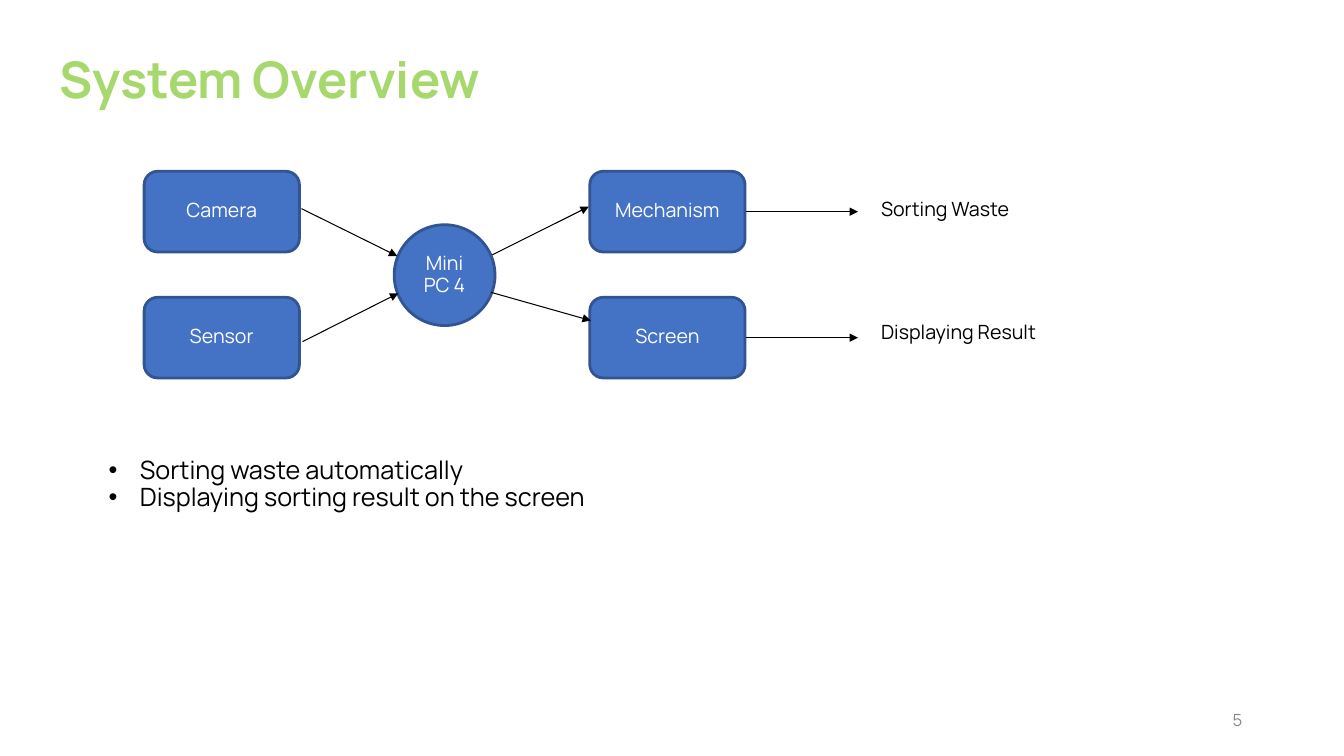
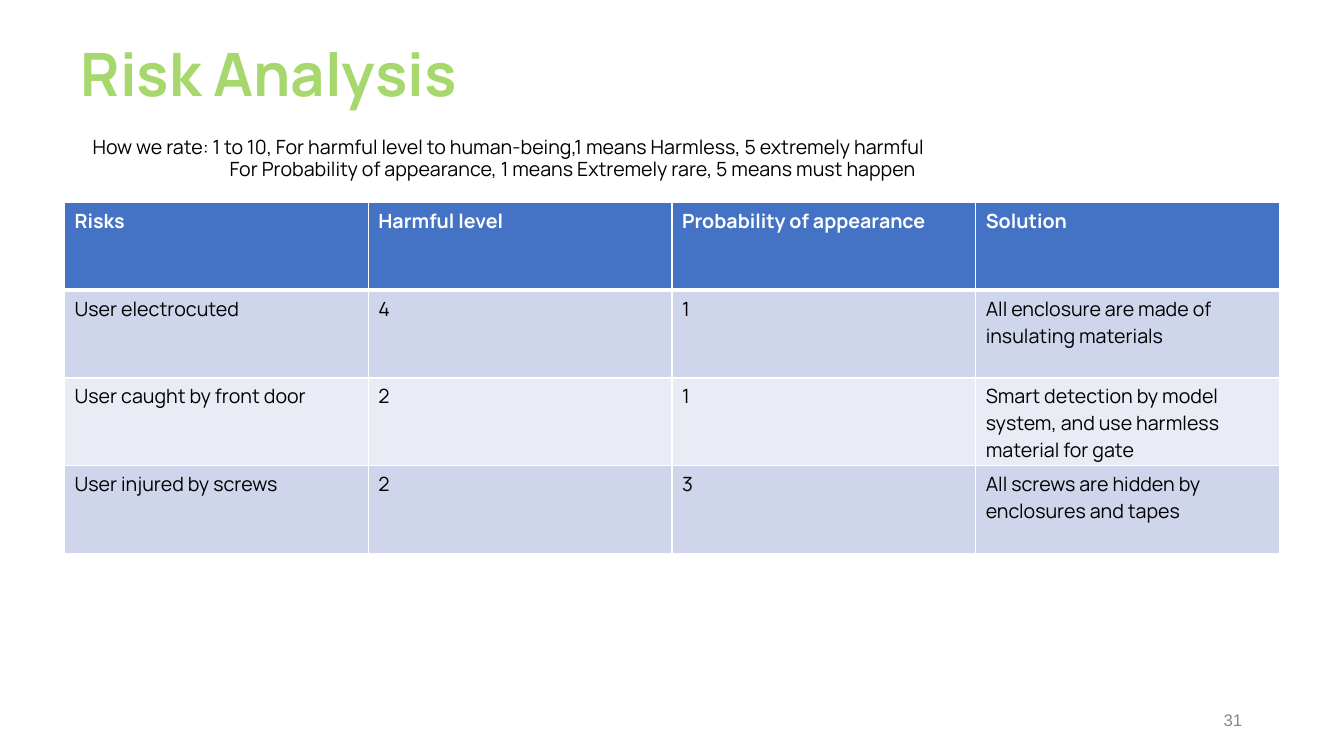
"""Build two slides: a system overview diagram and a risk analysis table."""
from lxml import etree
from pptx import Presentation
from pptx.dml.color import RGBColor
from pptx.enum.shapes import MSO_CONNECTOR, MSO_SHAPE
from pptx.enum.text import MSO_ANCHOR, MSO_AUTO_SIZE, PP_ALIGN
from pptx.oxml.ns import qn
from pptx.util import Pt

STRAIGHT = MSO_CONNECTOR.STRAIGHT
ROUNDED, OVAL = MSO_SHAPE.ROUNDED_RECTANGLE, MSO_SHAPE.OVAL
TOP, MIDDLE = MSO_ANCHOR.TOP, MSO_ANCHOR.MIDDLE
LEFT, CENTER, RIGHT = PP_ALIGN.LEFT, PP_ALIGN.CENTER, PP_ALIGN.RIGHT
NO_AUTOFIT = MSO_AUTO_SIZE.NONE

EMU_PER_PX = 9144
FONT = "Manrope"
TITLE_ONLY = 5
TIGHT = 0.9
COLORS = {
    "title": "A7D86D", "text": "000000", "white": "FFFFFF", "number": "888888",
    "node": "4472C4", "outline": "325491", "band": "CFD5EA", "light": "E9EBF5",
}
RISKS = [
    ["Risks", "Harmful level", "Probability of appearance", "Solution"],
    ["User electrocuted", "4", "1", "All enclosure are made of insulating materials"],
    ["User caught by front door", "2", "1",
     "Smart detection by model system, and use harmless material for gate"],
    ["User injured by screws", "2", "3", "All screws are hidden by enclosures and tapes"],
]


def px(*lengths):
    """Turn pixel lengths into EMU."""
    return [length * EMU_PER_PX for length in lengths]


def color(name):
    """Look up a named colour."""
    return RGBColor.from_string(COLORS[name])


def style(paragraph, size, color_name, bold=False, align=LEFT, font_name=FONT, spacing=TIGHT):
    """Format one whole paragraph."""
    paragraph.alignment = align
    paragraph.line_spacing = spacing
    font = paragraph.font
    font.name, font.size, font.bold = font_name, Pt(size), bold
    font.color.rgb = color(color_name)


def add_bullet(paragraph, indent):
    """Give a paragraph a round bullet with a hanging indent."""
    properties = paragraph._p.get_or_add_pPr()
    properties.set("marL", str(indent * EMU_PER_PX))
    properties.set("indent", str(-indent * EMU_PER_PX))
    etree.SubElement(properties, qn("a:buFont"), typeface="Arial")
    etree.SubElement(properties, qn("a:buChar"), char="•")


def add_text(slide, box, lines, size=14, color_name="text", anchor=TOP, bullet=0, **options):
    """Add a text box with one paragraph per line."""
    frame = slide.shapes.add_textbox(*px(*box)).text_frame
    frame.word_wrap = True
    frame.vertical_anchor = anchor
    frame.text = "\n".join(lines)
    for paragraph in frame.paragraphs:
        if bullet:
            add_bullet(paragraph, bullet)
        style(paragraph, size, color_name, **options)
    return frame


def add_slide(presentation, title, box, size, number, number_font):
    """Add a slide with its title and page number."""
    slide = presentation.slides.add_slide(presentation.slide_layouts[TITLE_ONLY])
    shape = slide.shapes.title
    shape.left, shape.top, shape.width, shape.height = px(*box)
    frame = shape.text_frame
    frame.text = title
    frame.auto_size = NO_AUTOFIT
    frame.vertical_anchor = TOP
    style(frame.paragraphs[0], size, "title", bold=True)
    add_text(slide, (942, 695, 300, 40), [number], 12, "number", MIDDLE,
             align=RIGHT, font_name=number_font)
    return slide


def add_node(slide, kind, box, text):
    """Add a filled diagram node with centred text."""
    shape = slide.shapes.add_shape(kind, *px(*box))
    shape.shadow.inherit = False
    shape.fill.solid()
    shape.fill.fore_color.rgb = color("node")
    shape.line.color.rgb = color("outline")
    shape.line.width = Pt(2)
    frame = shape.text_frame
    frame.vertical_anchor = MIDDLE
    frame.text = text
    for paragraph in frame.paragraphs:
        style(paragraph, 14, "white", align=CENTER)


def add_arrow(slide, *ends):
    """Add a thin straight arrow between two points."""
    connector = slide.shapes.add_connector(STRAIGHT, *px(*ends))
    connector.line.color.rgb = color("text")
    connector.line.width = Pt(0.75)
    etree.SubElement(connector.line._get_or_add_ln(), qn("a:tailEnd"), type="triangle")
    etree.SubElement(connector._element.spPr, qn("a:effectLst"))


def set_borders(cell, is_header):
    """Draw white cell borders, heavier below the header."""
    properties = cell._tc.get_or_add_tcPr()
    for side in "LRTB":
        width = Pt(3 if is_header and side == "B" else 1)
        line = etree.SubElement(properties, qn(f"a:ln{side}"), w=str(width))
        fill = etree.SubElement(line, qn("a:solidFill"))
        etree.SubElement(fill, qn("a:srgbClr"), val=COLORS["white"])


def add_table(slide, box, rows):
    """Add a banded table with a bold header row."""
    table = slide.shapes.add_table(len(rows), len(rows[0]), *px(*box)).table
    for row_index, row in enumerate(rows):
        is_header = row_index == 0
        fill_name = "node" if is_header else "band" if row_index % 2 else "light"
        for column_index, text in enumerate(row):
            cell = table.cell(row_index, column_index)
            cell.text = text
            set_borders(cell, is_header)
            cell.fill.solid()
            cell.fill.fore_color.rgb = color(fill_name)
            style(cell.text_frame.paragraphs[0], 14, "white" if is_header else "text",
                  bold=is_header, spacing=1.0)


def build_overview(presentation):
    """Build the system diagram slide."""
    slide = add_slide(presentation, "System Overview", (49, 50, 761, 71), 36, "5", FONT)
    for left, names in ((143, ("Camera", "Sensor")), (585, ("Mechanism", "Screen"))):
        for row, name in enumerate(names):
            add_node(slide, ROUNDED, (left, 170 + 125 * row, 154, 80), name)
    add_node(slide, OVAL, (391, 223, 100, 100), "Mini\nPC 4")
    for ends in ((299, 207, 394, 254), (300, 339, 395, 291), (488, 253, 584, 205),
                 (487, 290, 586, 318), (740, 210, 851, 210), (740, 335, 851, 335)):
        add_arrow(slide, *ends)
    for top, result in ((193, "Sorting Waste"), (315, "Displaying Result")):
        add_text(slide, (864, top, 204, 34), [result])
    add_text(slide, (98, 449, 626, 71),
             ["Sorting waste automatically", "Displaying sorting result on the screen"],
             18, bullet=31)


def build_risks(presentation):
    """Build the risk table slide."""
    slide = add_slide(presentation, "Risk Analysis", (70, 40, 667, 82), 42.7, "31", "Arial")
    add_table(slide, (64, 201, 1205, 348), RISKS)
    frame = add_text(slide, (82, 132, 1146, 57), [
        "How we rate: 1 to 10, For harmful level to human-being,1 means Harmless, "
        "5 extremely harmful",
        "For Probability of appearance, 1 means Extremely rare, 5 means must happen",
    ])
    frame.paragraphs[1]._p.get_or_add_pPr().set("marL", str(136 * EMU_PER_PX))


def main():
    """Build and save the presentation."""
    presentation = Presentation()
    presentation.slide_width, presentation.slide_height = px(1333, 750)
    build_overview(presentation)
    build_risks(presentation)
    presentation.save("out.pptx")


if __name__ == "__main__":
    main()
